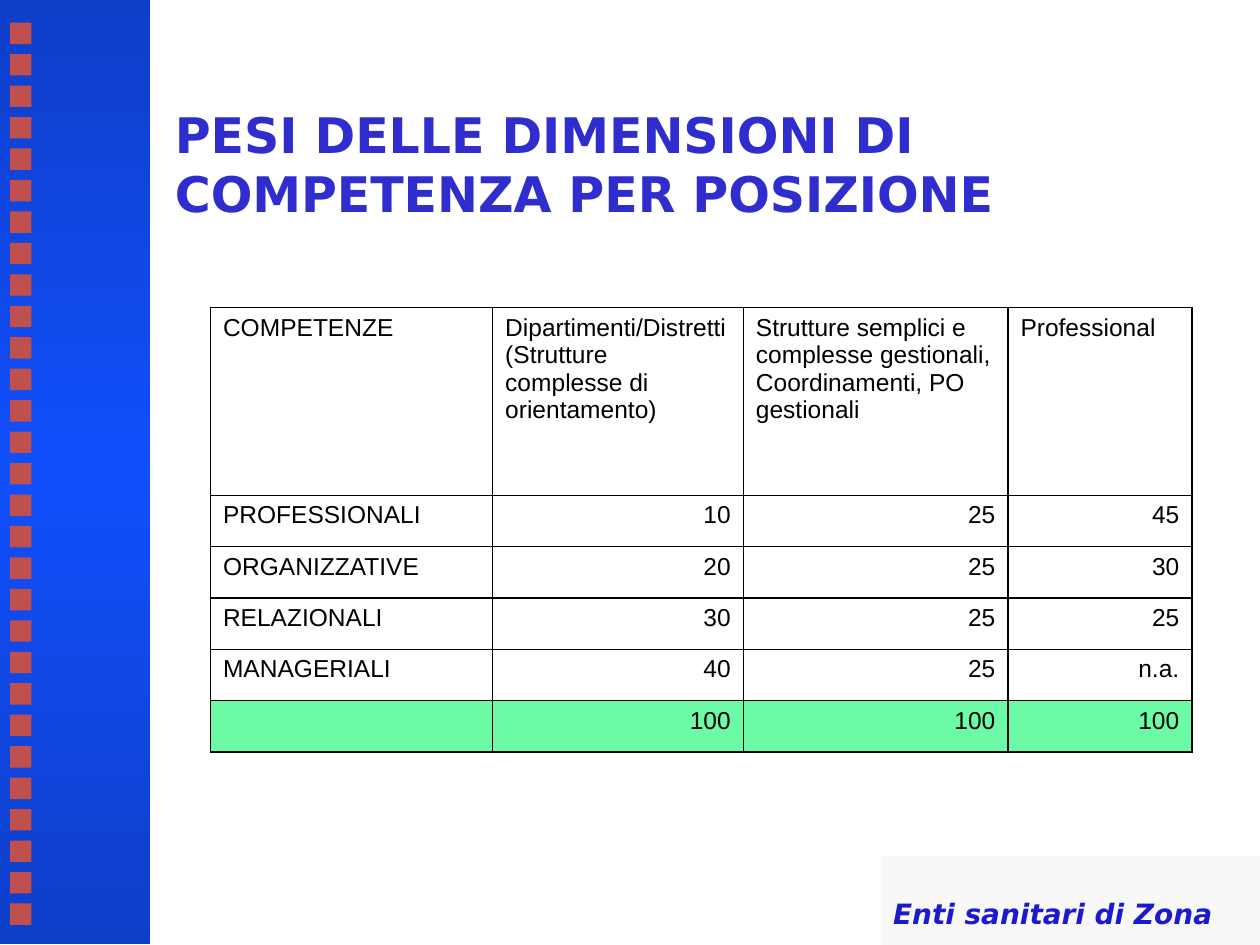
from copy import deepcopy

from lxml.etree import SubElement
from pptx import Presentation
from pptx.dml.color import RGBColor as RGB
from pptx.enum.shapes import MSO_SHAPE as SHAPE
from pptx.enum.text import MSO_ANCHOR as ANCHOR, PP_ALIGN as ALIGN
from pptx.oxml.ns import qn
from pptx.util import Inches as In, Pt

COLORS = {"edge": "0E3FC9", "middle": "114FFB", "square": "C0504D",
          "title": "2F2DCE", "footer": "1B1BCD", "footer_bg": "F8F8F8",
          "text": "000000", "total": "6DFAA7"}
COLUMNS = [2.24, 1.99, 2.1, 1.46]
ROWS = [1.5] + [0.41] * 5
DATA = [
    ["COMPETENZE", "Dipartimenti/Distretti (Strutture complesse di orientamento)",
     "Strutture semplici e complesse gestionali, Coordinamenti, PO gestionali",
     "Professional"],
    ["PROFESSIONALI", "10", "25", "45"],
    ["ORGANIZZATIVE", "20", "25", "30"],
    ["RELAZIONALI", "30", "25", "25"],
    ["MANAGERIALI", "40", "25", "n.a."],
    ["", "100", "100", "100"],
]


def color(name):
    """Return the named colour."""
    return RGB.from_string(COLORS[name])


def set_font(p, name, size, fill, bold=False, italic=False):
    """Set the font of a paragraph."""
    f = p.font
    f.name, f.size, f.bold, f.italic = name, Pt(size), bold, italic
    f.color.rgb = color(fill)


def add_rect(s, x, y, w, h, fill=None):
    """Add a plain rectangle without line or shadow."""
    sp = s.shapes.add_shape(SHAPE.RECTANGLE, In(x), In(y), In(w), In(h))
    sp.shadow.inherit = False
    sp.line.fill.background()
    if fill:
        sp.fill.solid()
        sp.fill.fore_color.rgb = color(fill)
    return sp


def add_sidebar(s, x, y, w, h, count=29):
    """Add the gradient band with its column of squares."""
    band = add_rect(s, x, y, w, h)
    band.fill.gradient()
    band.fill.gradient_angle = 90
    stops = band.fill.gradient_stops
    for stop, name, pos in zip(stops, ("edge", "middle"), (0, 0.5)):
        stop.color.rgb, stop.position = color(name), pos
    stop_list = band.fill._xPr.find(qn("a:gradFill")).find(qn("a:gsLst"))
    last = deepcopy(stop_list[0])
    last.set("pos", "100000")
    stop_list.append(last)
    pitch = h / (count + 1)
    for i in range(count):
        add_rect(s, x + 0.08, y + 0.18 + i * pitch, 0.17, 0.17, "square")


def add_title(s, x, y, w, h):
    """Add the slide title."""
    tf = s.shapes.add_textbox(In(x), In(y), In(w), In(h)).text_frame
    tf.word_wrap, tf.vertical_anchor = True, ANCHOR.MIDDLE
    tf.margin_left = tf.margin_right = tf.margin_top = tf.margin_bottom = In(0.1)
    p = tf.paragraphs[0]
    p.text = "PESI DELLE DIMENSIONI DI COMPETENZA PER POSIZIONE"
    set_font(p, "DejaVu Sans", 28, "title", bold=True)


def set_borders(cell):
    """Draw a thin line on the four sides of a cell."""
    props = cell._tc.get_or_add_tcPr()
    for i, side in enumerate(("lnL", "lnR", "lnT", "lnB")):
        ln = SubElement(props, qn(f"a:{side}"), w=str(Pt(1)))
        fill = SubElement(ln, qn("a:solidFill"))
        SubElement(fill, qn("a:srgbClr"), val=COLORS["text"])
        props.insert(i, ln)


def add_weights(s, x, y, w, h):
    """Add the table of weights, with the total in the last row."""
    table = s.shapes.add_table(len(ROWS), len(COLUMNS),
                               In(x), In(y), In(w), In(h)).table
    table.first_row = table.horz_banding = False
    for column, share in zip(table.columns, COLUMNS):
        column.width = In(w * share / sum(COLUMNS))
    for row, share in zip(table.rows, ROWS):
        row.height = In(h * share / sum(ROWS))
    for i, values in enumerate(DATA):
        for j, value in enumerate(values):
            cell = table.cell(i, j)
            if i == len(DATA) - 1:
                cell.fill.solid()
                cell.fill.fore_color.rgb = color("total")
            else:
                cell.fill.background()
            set_borders(cell)
            p = cell.text_frame.paragraphs[0]
            p.text = value
            p.alignment = ALIGN.RIGHT if i and j else ALIGN.LEFT
            set_font(p, "Arial", 14, "text")


def add_footer(s, x, y, w, h):
    """Add the shaded box that names the organisations."""
    tf = add_rect(s, x, y, w, h, "footer_bg").text_frame
    tf.word_wrap, tf.vertical_anchor = True, ANCHOR.MIDDLE
    p = tf.paragraphs[0]
    p.text, p.alignment = "Enti sanitari di Zona", ALIGN.LEFT
    set_font(p, "DejaVu Sans", 16, "footer", bold=True, italic=True)


def main():
    """Build and save the slide."""
    prs = Presentation()
    prs.slide_width, prs.slide_height = In(10), In(7.5)
    s = prs.slides.add_slide(prs.slide_layouts[6])
    add_sidebar(s, 0, 0, 1.19, 7.49)
    add_title(s, 1.29, 0.67, 8.44, 1.25)
    add_weights(s, 1.67, 2.44, 7.79, 3.53)
    add_footer(s, 6.99, 6.79, 3.44, 0.91)
    prs.save("out.pptx")


if __name__ == "__main__":
    main()
